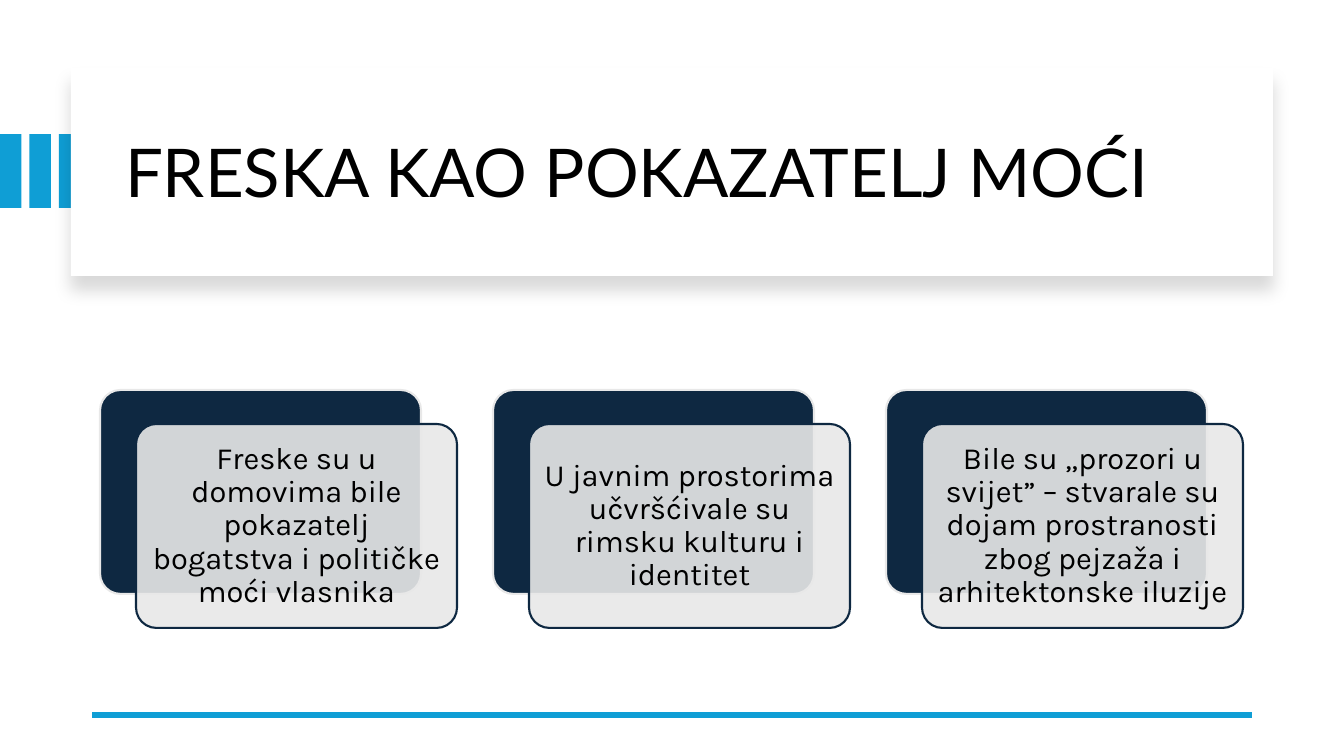
import pptx
import pptx.dml.color
import pptx.enum.shapes
import pptx.enum.text
import pptx.oxml
import pptx.oxml.ns
import pptx.util
from lxml import etree

SCALE = 914400 / 100.8
BLUE, NAVY, GREY, WHITE, BLACK = "0F9ED5", "0E2841", "E8E8E8", "FFFFFF", "000000"
KIND = pptx.enum.shapes.MSO_SHAPE
ALIGN = pptx.enum.text.PP_ALIGN
NOTES = [
    "Freske su u domovima bile pokazatelj bogatstva i političke moći vlasnika",
    "U javnim prostorima učvršćivale su rimsku kulturu i identitet",
    "Bile su „prozori u svijet” – stvarale su dojam prostranosti zbog pejzaža i arhitektonske iluzije",
]


def px(*vals):
    return [pptx.util.Emu(round(val * SCALE)) for val in vals]


def tint(code):
    return pptx.dml.color.RGBColor.from_string(code)


def apply(item, **vals):
    for key, val in vals.items():
        setattr(item, key, val)


class Deck:
    """Draw styled elements on the current slide."""

    def __init__(self):
        self.file = pptx.Presentation()
        wide, high = px(1344, 756)
        apply(self.file, slide_width=wide, slide_height=high)
        self.slide = self.file.slides.add_slide(self.file.slide_layouts[6])

    def shape(self, kind, box, fill, edge=None):
        item = self.slide.shapes.add_shape(kind, *px(*box))
        item.shadow.inherit = False
        item.fill.solid()
        item.fill.fore_color.rgb = tint(fill)
        if edge:
            item.line.color.rgb = tint(edge)
            item.line.width = pptx.util.Pt(1.5)
        else:
            item.line.fill.background()
        return item

    def round(self, box, fill, edge, alpha=100):
        item = self.shape(KIND.ROUNDED_RECTANGLE, box, fill, edge)
        item.adjustments[0] = 0.1
        if alpha < 100:
            color = item.fill._xPr.find(".//" + pptx.oxml.ns.qn("a:srgbClr"))
            etree.SubElement(color, pptx.oxml.ns.qn("a:alpha"), val=str(alpha * 1000))

    def panel(self, box):
        item = self.shape(KIND.RECTANGLE, box, WHITE)
        blur, dist = pptx.util.Pt(11), pptx.util.Pt(10)
        effect = item._element.spPr.find(pptx.oxml.ns.qn("a:effectLst"))
        effect.append(pptx.oxml.parse_xml(
            f'<a:outerShdw {pptx.oxml.ns.nsdecls("a")} blurRad="{blur}" dist="{dist}" '
            f'dir="5400000" algn="t" rotWithShape="0"><a:srgbClr val="{BLACK}">'
            '<a:alpha val="15000"/></a:srgbClr></a:outerShdw>'))

    def text(self, box, words, font, size, align, pad):
        frame = self.slide.shapes.add_textbox(*px(*box)).text_frame
        gap = px(pad)[0]
        apply(frame, word_wrap=True, margin_left=gap, margin_right=gap,
              margin_top=gap, margin_bottom=gap,
              vertical_anchor=pptx.enum.text.MSO_ANCHOR.MIDDLE)
        para = frame.paragraphs[0]
        apply(para, alignment=align, line_spacing=0.9)
        run = para.add_run()
        run.text = words
        apply(run.font, name=font, size=pptx.util.Pt(size))
        run.font.color.rgb = tint(BLACK)

    def rule(self, ends):
        item = self.slide.shapes.add_connector(
            pptx.enum.shapes.MSO_CONNECTOR.STRAIGHT, *px(*ends))
        item.line.color.rgb = tint(BLUE)
        item.line.width = pptx.util.Pt(4.5)
        etree.SubElement(item._element.spPr, pptx.oxml.ns.qn("a:effectLst"))


def main():
    deck = Deck()
    for step in range(3):
        deck.shape(KIND.RECTANGLE, (step * 29.5, 134, 21.5, 74), BLUE)
    deck.panel((71, 68, 1202, 208))
    deck.text((115, 90, 1122, 171), "FRESKA KAO POKAZATELJ MOĆI", "Lato", 48, ALIGN.LEFT, 10)
    deck.rule((1252, 715, 92, 715))
    for step, words in enumerate(NOTES):
        left = 100 + step * 393
        deck.round((left, 390, 321, 204), NAVY, GREY)
        deck.round((left + 36, 424, 321, 204), GREY, NAVY, 90)
        deck.text((left + 42, 430, 309, 192), words, "Karla", 22, ALIGN.CENTER, 9)
    deck.file.save("out.pptx")


if __name__ == "__main__":
    main()
